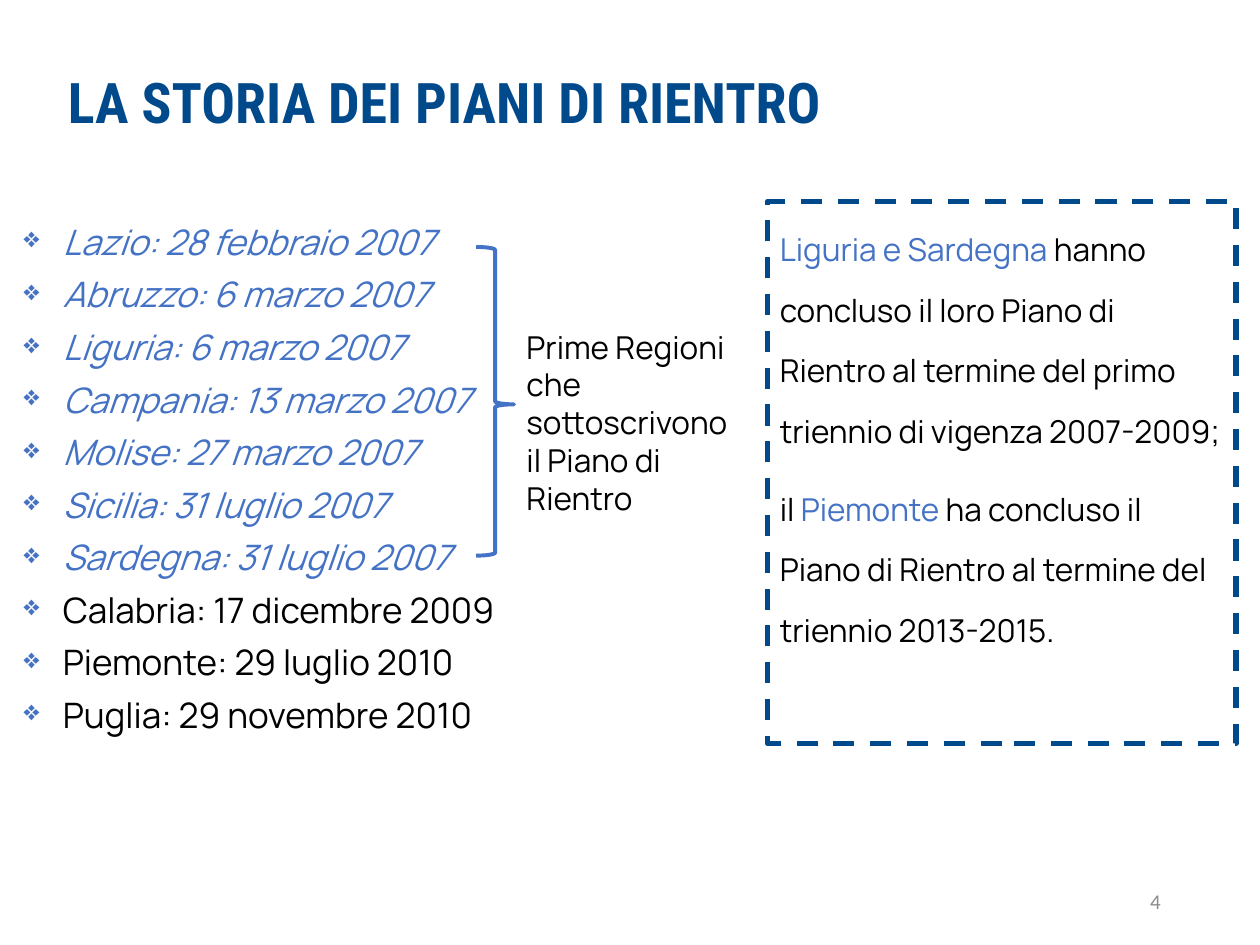
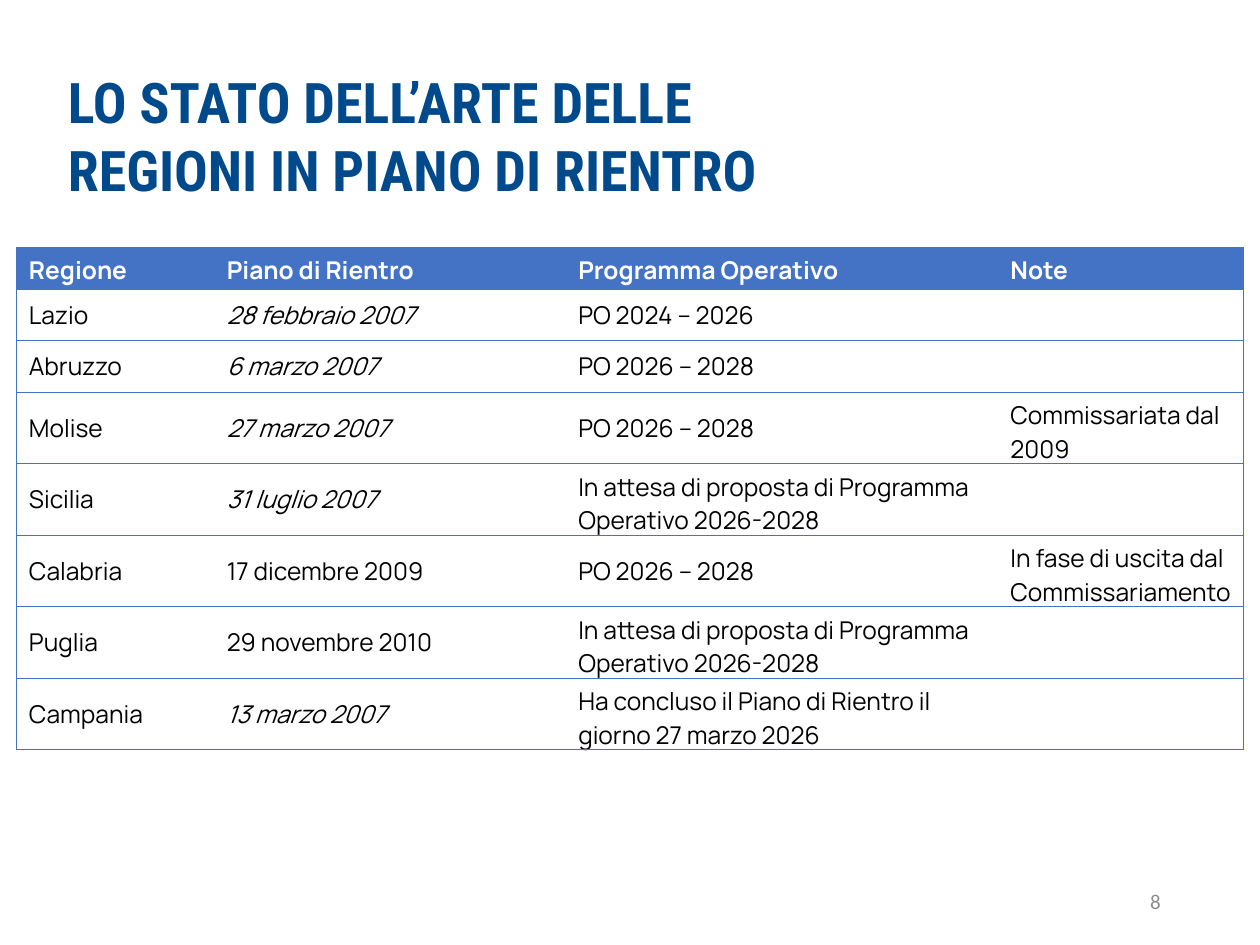
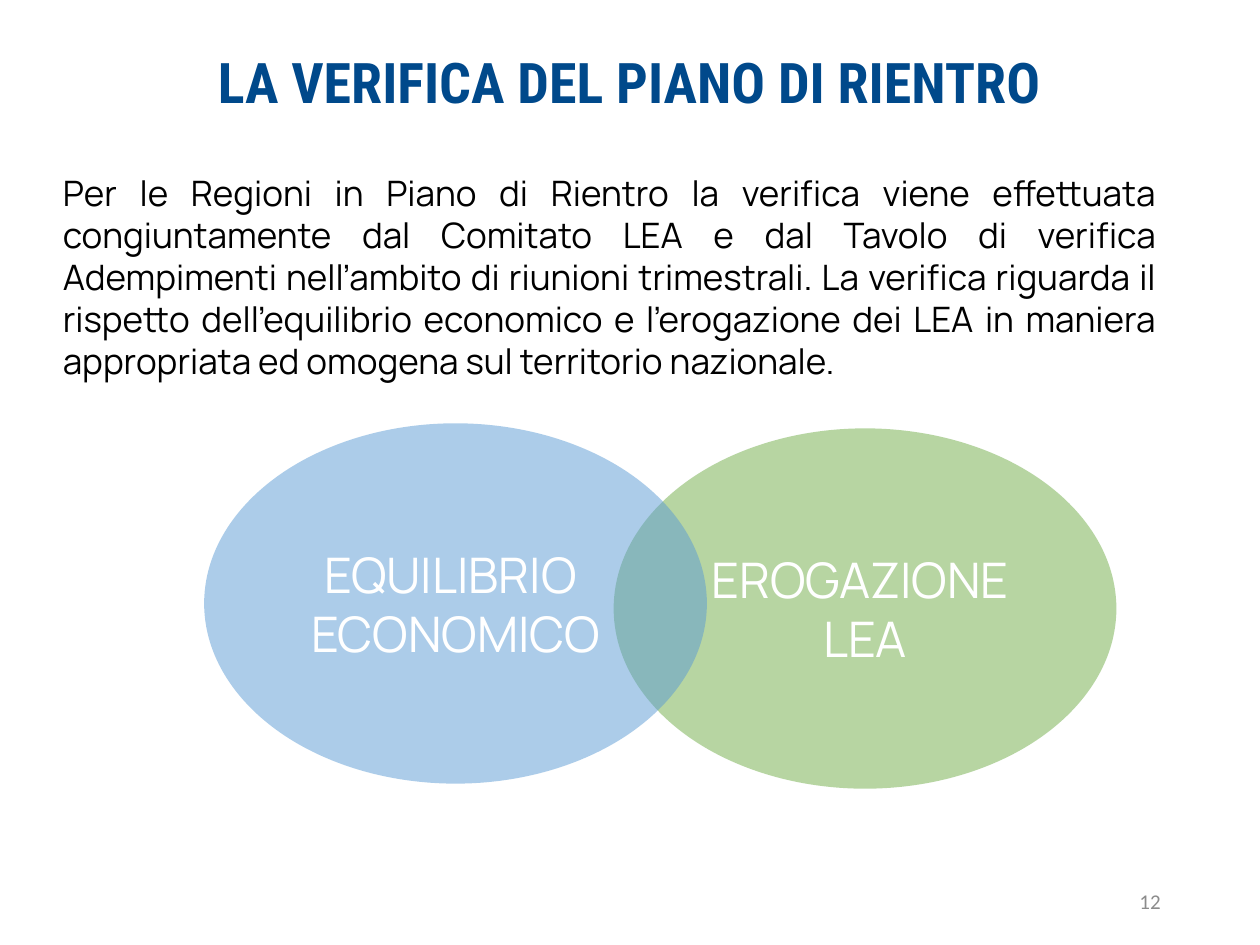
import pptx
import pptx.util
import pptx.dml.color
import pptx.enum.text
import pptx.enum.shapes
import pptx.enum.dml
import pptx.oxml
import pptx.oxml.ns
import lxml.etree

Inches = pptx.util.Inches
Pt = pptx.util.Pt
Align = pptx.enum.text.PP_ALIGN
Anchor = pptx.enum.text.MSO_ANCHOR
Shape = pptx.enum.shapes.MSO_SHAPE
qn = pptx.oxml.ns.qn

COLORS = {
    "navy": "00498B",
    "blue": "4472C4",
    "black": "000000",
    "white": "FFFFFF",
    "gray": "8C8C8C",
    "green": "70AD47",
    "sky": "5B9BD5",
}
BODY = "Manrope"

FIRST = [
    "Lazio: 28 febbraio 2007",
    "Abruzzo: 6 marzo 2007",
    "Liguria: 6 marzo 2007",
    "Campania: 13 marzo 2007",
    "Molise: 27 marzo 2007",
    "Sicilia: 31 luglio 2007",
    "Sardegna: 31 luglio 2007",
]
LATER = [
    "Calabria: 17 dicembre 2009",
    "Piemonte: 29 luglio 2010",
    "Puglia: 29 novembre 2010",
]
ENDED = [
    [("Liguria e Sardegna ", "blue"),
     ("hanno concluso il loro Piano di Rientro al termine del primo "
      "triennio di vigenza 2007-2009;", "black")],
    [("il ", "black"), ("Piemonte", "blue"),
     (" ha concluso il Piano di Rientro al termine del triennio 2013-2015.",
      "black")],
]
HEAD = ["Regione", "Piano di Rientro", "Programma Operativo", "Note"]
NEXT = "PO 2026 – 2028"
WAIT = "In attesa di proposta di Programma Operativo 2026-2028"
STATUS = [
    ("Lazio", "28 febbraio 2007", "PO 2024 – 2026", ""),
    ("Abruzzo", "6 marzo 2007", NEXT, ""),
    ("Molise", "27 marzo 2007", NEXT, "Commissariata dal 2009"),
    ("Sicilia", "31 luglio 2007", WAIT, ""),
    ("Calabria", "17 dicembre 2009", NEXT,
     "In fase di uscita dal Commissariamento"),
    ("Puglia", "29 novembre 2010", WAIT, ""),
    ("Campania", "13 marzo 2007",
     "Ha concluso il Piano di Rientro il giorno 27 marzo 2026", ""),
]
CHECK = (
    "Per le Regioni in Piano di Rientro la verifica viene effettuata "
    "congiuntamente dal Comitato LEA e dal Tavolo di verifica Adempimenti "
    "nell’ambito di riunioni trimestrali. La verifica riguarda il rispetto "
    "dell’equilibrio economico e l’erogazione dei LEA in maniera appropriata "
    "ed omogena sul territorio nazionale."
)


def rgb(color):
    return pptx.dml.color.RGBColor.from_string(COLORS[color])


def style(item, size, color=None, face=BODY, bold=False, italic=False):
    font = item.font
    font.size, font.name = Pt(size), face
    font.bold, font.italic = bold, italic
    if color:
        font.color.rgb = rgb(color)


def add_paras(frame, count):
    return [frame.paragraphs[0]] + [
        frame.add_paragraph() for _ in range(count - 1)]


def add_box(slide, area):
    frame = slide.shapes.add_textbox(*map(Inches, area)).text_frame
    frame.word_wrap = True
    return frame


def add_text(slide, area, text, size, color="black", face=BODY, bold=False,
             align=None, anchor=Anchor.TOP):
    frame = add_box(slide, area)
    frame.vertical_anchor = anchor
    para = frame.paragraphs[0]
    para.text, para.alignment = text, align
    style(para, size, color, face, bold)


def add_page(deck, title, area, number):
    slide = deck.slides.add_slide(deck.slide_layouts[6])
    add_text(slide, (7.06, 6.95, 2.25, 0.4), number, 12, "gray", "Calibri",
             align=Align.RIGHT, anchor=Anchor.MIDDLE)
    add_text(slide, area, title, 32, "navy", "Roboto Condensed", True)
    return slide


def add_bullet(para):
    props = para._p.get_or_add_pPr()
    props.set("marL", str(Inches(0.4)))
    props.set("indent", str(Inches(-0.31)))
    tint = lxml.etree.SubElement(props, qn("a:buClr"))
    lxml.etree.SubElement(tint, qn("a:srgbClr"), val=COLORS["blue"])
    lxml.etree.SubElement(props, qn("a:buSzPct"), val="80000")
    lxml.etree.SubElement(props, qn("a:buChar"), char="❖")


def add_dates(slide, area):
    frame = add_box(slide, area)
    dates = FIRST + LATER
    for i, para in enumerate(add_paras(frame, len(dates))):
        para.text = dates[i]
        add_bullet(para)
        early = i < len(FIRST)
        style(para, 20, "blue" if early else "black", italic=early)
        if i:
            para.space_before = Pt(6)


def add_form(slide, kind, area):
    form = slide.shapes.add_shape(kind, *map(Inches, area))
    form.shadow.inherit = False
    return form


def add_frame(slide, area):
    form = add_form(slide, Shape.RECTANGLE, area)
    form.fill.solid()
    form.fill.fore_color.rgb = rgb("white")
    form.line.color.rgb = rgb("navy")
    form.line.width = Pt(3)
    form.line.dash_style = pptx.enum.dml.MSO_LINE.DASH
    frame = form.text_frame
    frame.vertical_anchor = Anchor.TOP
    for i, para in enumerate(add_paras(frame, len(ENDED))):
        para.alignment = Align.LEFT
        para.line_spacing = 1.6
        if i:
            para.space_before = Pt(10)
        style(para, 18)
        for text, color in ENDED[i]:
            run = para.add_run()
            run.text = text
            run.font.color.rgb = rgb(color)


def add_brace(slide, area):
    form = add_form(slide, Shape.RIGHT_BRACE, area)
    form.fill.background()
    form.line.color.rgb = rgb("blue")
    form.line.width = Pt(2.25)
    form.adjustments[0] = 0.08
    form.adjustments[1] = 0.51


def add_oval(slide, area, color, lines):
    form = add_form(slide, Shape.OVAL, area)
    form.fill.solid()
    form.fill.fore_color.rgb = rgb(color)
    tint = form._element.spPr.find(qn("a:solidFill"))[0]
    lxml.etree.SubElement(tint, qn("a:alpha"), val="50000")
    form.line.fill.background()
    frame = form.text_frame
    frame.vertical_anchor = Anchor.MIDDLE
    for para, line in zip(add_paras(frame, len(lines)), lines):
        para.text, para.alignment = line, Align.CENTER
        style(para, 28, "white")


def add_edges(cell, sides):
    props = cell._tc.get_or_add_tcPr()
    for i, side in enumerate("LRTB"):
        edge = lxml.etree.Element(qn("a:ln" + side), w=str(Pt(0.5)))
        if side in sides:
            fill = lxml.etree.SubElement(edge, qn("a:solidFill"))
            lxml.etree.SubElement(fill, qn("a:srgbClr"), val=COLORS["blue"])
        else:
            lxml.etree.SubElement(edge, qn("a:noFill"))
        props.insert(i, edge)


def add_cell(cell, text, top, italic, sides):
    if top:
        cell.fill.solid()
        cell.fill.fore_color.rgb = rgb("blue")
    else:
        cell.fill.background()
        cell.vertical_anchor = Anchor.MIDDLE
    add_edges(cell, sides)
    para = cell.text_frame.paragraphs[0]
    para.text = text
    style(para, 14, "white" if top else "black", bold=top, italic=italic)


def add_grid(slide, area, widths, heights):
    rows = [HEAD] + STATUS
    grid = slide.shapes.add_table(
        len(rows), len(HEAD), *map(Inches, area)).table
    grid.first_row = grid.horz_banding = False
    for col, width in zip(grid.columns, widths):
        col.width = Inches(width)
    for row, height in zip(grid.rows, heights):
        row.height = Inches(height)
    for r, row in enumerate(rows):
        for c, text in enumerate(row):
            sides = "TB" + {0: "L", len(HEAD) - 1: "R"}.get(c, "")
            first = c == 1 and f"{row[0]}: {text}" in FIRST
            add_cell(grid.cell(r, c), text, r == 0, first, sides)


def add_story(deck):
    slide = add_page(deck, "LA STORIA DEI PIANI DI RIENTRO",
                     (0.44, 0.49, 6.43, 0.64), "4")
    add_dates(slide, (0, 1.7, 4.24, 4.61))
    add_frame(slide, (6.09, 1.6, 3.72, 4.3))
    add_brace(slide, (3.78, 1.96, 0.3, 2.45))
    add_text(slide, (4.08, 2.55, 1.82, 1.62),
             "Prime Regioni che sottoscrivono il Piano di Rientro", 18)


def add_state(deck):
    slide = add_page(deck,
                     "LO STATO DELL’ARTE DELLE REGIONI IN PIANO DI RIENTRO",
                     (0.44, 0.49, 6.43, 1.18), "8")
    add_grid(slide, (0.13, 1.96, 9.74, 3.98), (1.57, 2.79, 3.43, 1.95),
             [0.31] + [0.41] * len(STATUS))


def add_check(deck):
    slide = add_page(deck, "LA VERIFICA DEL PIANO DI RIENTRO",
                     (1.63, 0.33, 6.81, 0.64), "12")
    add_text(slide, (0.4, 1.31, 8.88, 1.81), CHECK, 20, align=Align.JUSTIFY)
    add_oval(slide, (4.87, 3.4, 3.99, 2.86), "green", ["EROGAZIONE ", "LEA"])
    add_oval(slide, (1.62, 3.36, 3.99, 2.86), "sky",
             ["EQUILIBRIO ", "ECONOMICO"])


def main():
    deck = pptx.Presentation()
    deck.slide_width, deck.slide_height = Inches(10), Inches(7.5)
    add_story(deck)
    add_state(deck)
    add_check(deck)
    deck.save("out.pptx")


if __name__ == "__main__":
    main()
